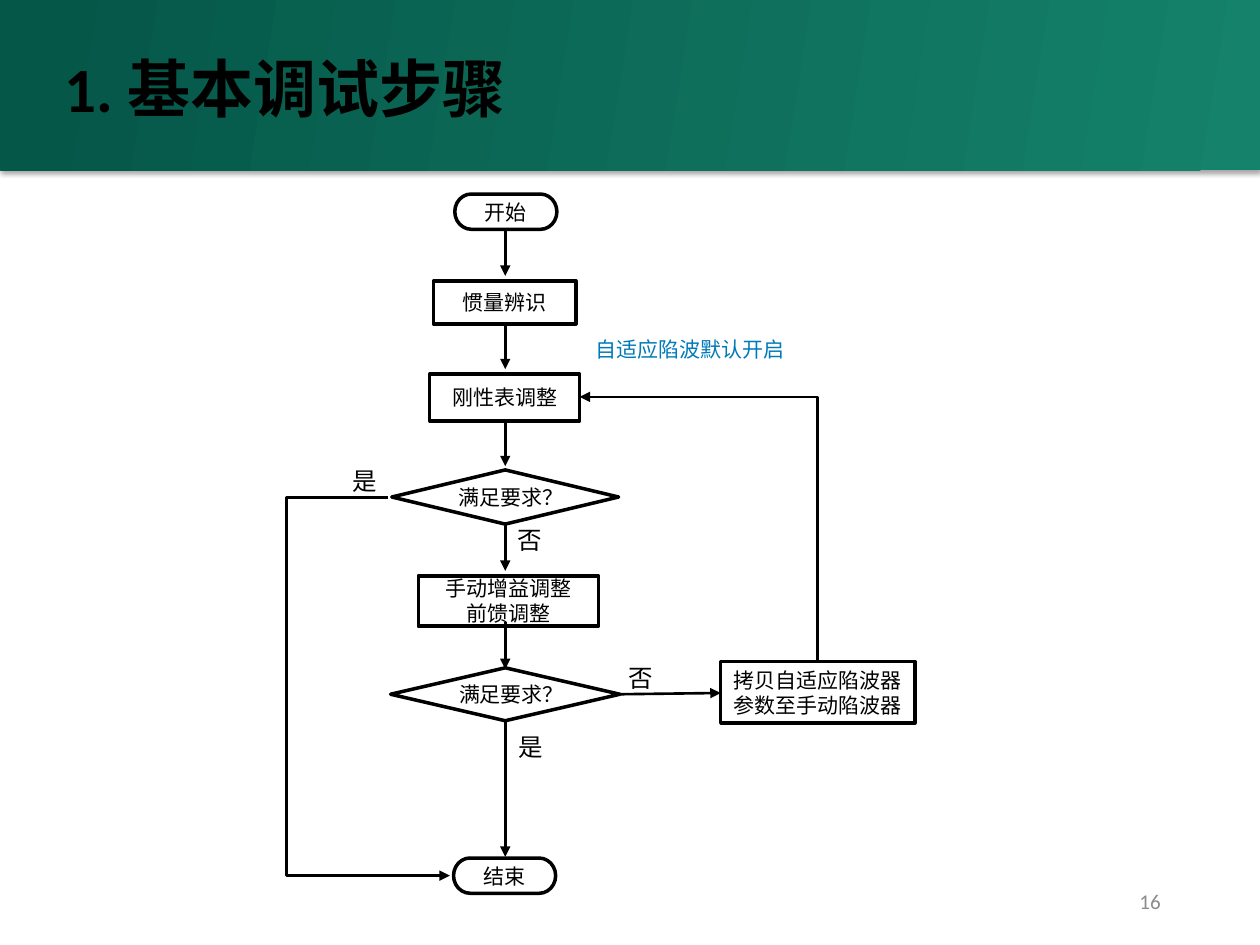
from lxml import etree
from pptx import Presentation
from pptx import util as u
from pptx.dml.color import RGBColor
from pptx.enum import shapes, text
from pptx.oxml import parse_xml
from pptx.oxml.ns import qn

In = u.Inches
C = {"ink": "000000", "note": "007AB8", "number": "8C8C8C",
     "banner_light": "15826B", "banner_dark": "055748"}
CJK = "Noto Sans CJK SC"
MID, TOP = text.MSO_ANCHOR.MIDDLE, text.MSO_ANCHOR.TOP
LEFT, CENTER, RIGHT = text.PP_ALIGN.LEFT, text.PP_ALIGN.CENTER, text.PP_ALIGN.RIGHT


def write(sp, words, size, font="Arial", color="ink", align=LEFT, anchor=TOP, bold=False):
    tf = sp.text_frame
    tf.text = words
    tf.word_wrap = True
    tf.vertical_anchor = anchor
    for p in tf.paragraphs:
        p.alignment = align
        for r in p.runs:
            r.font.size = u.Pt(size)
            r.font.name = font
            r.font.bold = bold
            r.font.color.rgb = RGBColor.from_string(C[color])
            etree.SubElement(r.font._element, qn("a:ea")).set("typeface", CJK)
    return tf


def connect(kind, x1, y1, x2, y2, arrow="tailEnd"):
    cn = s.shapes.add_connector(kind, In(x1), In(y1), In(x2), In(y2))
    cn.line.width = u.Pt(1.5)
    cn.line.color.rgb = RGBColor.from_string(C["ink"])
    etree.SubElement(cn.line._get_or_add_ln(), qn("a:" + arrow)).set("type", "triangle")
    etree.SubElement(cn._element.spPr, qn("a:effectLst"))
    return cn


prs = Presentation()
prs.slide_width, prs.slide_height = In(10), In(7.5)
s = prs.slides.add_slide(prs.slide_layouts[5])

# Banner behind the title
banner = s.shapes.add_shape(shapes.MSO_SHAPE.RECTANGLE, 0, 0, In(10), In(1.35))
banner.line.fill.background()
banner.fill.gradient()
banner.fill.gradient_angle = 171
for stop, place, name in zip(banner.fill.gradient_stops, (0, 0.97),
                             ("banner_light", "banner_dark")):
    stop.position = place
    stop.color.rgb = RGBColor.from_string(C[name])
banner._element.spPr.append(parse_xml(
    '<a:effectLst xmlns:a="http://schemas.openxmlformats.org/drawingml/2006/main">'
    '<a:outerShdw blurRad="39400" dist="22900" dir="5400000" rotWithShape="0">'
    '<a:srgbClr val="000000"><a:alpha val="35000"/></a:srgbClr>'
    '</a:outerShdw></a:effectLst>'))
s.shapes._spTree.insert(2, banner._element)

# Title
title = s.shapes.title
title.left, title.top, title.width, title.height = In(0.41), In(0.34), In(9), In(0.75)
write(title, "1. 基本调试步骤", 36, "Calibri", bold=True)

# Flowchart steps
END = shapes.MSO_SHAPE.FLOWCHART_TERMINATOR
STEP = shapes.MSO_SHAPE.FLOWCHART_PROCESS
TEST = shapes.MSO_SHAPE.FLOWCHART_DECISION
steps = [
    (END, 3.61, 1.54, 0.81, 0.28, "开始"),
    (STEP, 3.44, 2.23, 1.13, 0.34, "惯量辨识"),
    (STEP, 3.41, 2.97, 1.19, 0.37, "刚性表调整"),
    (TEST, 3.11, 3.73, 1.8, 0.43, "满足要求？"),
    (STEP, 3.32, 4.57, 1.43, 0.4, "手动增益调整\n前馈调整"),
    (TEST, 3.1, 5.3, 1.82, 0.42, "满足要求？"),
    (END, 3.6, 6.81, 0.81, 0.28, "结束"),
    (STEP, 5.72, 5.25, 1.54, 0.49, "拷贝自适应陷波器参数至手动陷波器"),
]
for kind, x, y, w, h, words in steps:
    sp = s.shapes.add_shape(kind, In(x), In(y), In(w), In(h))
    sp.shadow.inherit = False
    sp.fill.background()
    sp.line.color.rgb = RGBColor.from_string(C["ink"])
    sp.line.width = u.Pt(2)
    tf = write(sp, words, 12, align=CENTER, anchor=MID)
    tf.margin_left = tf.margin_right = In(0.05)
    tf.margin_top = tf.margin_bottom = 0
    if kind == TEST:
        tf.word_wrap = False
        tf.margin_left = In(0.15)

# Arrows down the main path and out to the side step
for y1, y2 in [(1.82, 2.19), (2.56, 2.93), (3.33, 3.7), (4.17, 4.53), (4.94, 5.31), (5.73, 6.8)]:
    connect(shapes.MSO_CONNECTOR.STRAIGHT, 4.01, y1, 4.01, y2)
connect(shapes.MSO_CONNECTOR.STRAIGHT, 4.92, 5.51, 5.72, 5.5)

# Loop back to the stiffness step: one bend, arrowhead at its start
loop = connect(shapes.MSO_CONNECTOR.ELBOW, 4.6, 3.15, 6.49, 5.25, "headEnd")
loop._element.spPr.find(qn("a:prstGeom")).set("prst", "bentConnector2")

# Shortcut to the end: the bend lies left of both ends
skip = connect(shapes.MSO_CONNECTOR.ELBOW, 3.08, 3.95, 3.57, 6.95)
guides = skip._element.spPr.find(qn("a:prstGeom")).get_or_add_avLst()
gd = etree.SubElement(guides, qn("a:gd"))
gd.set("name", "adj1")
gd.set("fmla", "val -164500")

# Branch labels, note and page number
labels = [
    (2.7, 3.65, 0.4, 0.28, "是", 14, CJK, "ink", LEFT, TOP),
    (4.01, 4.12, 0.4, 0.28, "否", 14, CJK, "ink", LEFT, TOP),
    (4.89, 5.21, 0.4, 0.28, "否", 14, CJK, "ink", LEFT, TOP),
    (4.02, 5.76, 0.4, 0.28, "是", 14, CJK, "ink", LEFT, TOP),
    (4.63, 2.62, 1.85, 0.3, "自适应陷波默认开启", 12, "Arial", "note", LEFT, TOP),
    (7.06, 6.95, 2.25, 0.4, "16", 12, "Calibri", "number", RIGHT, MID),
]
for x, y, w, h, *style in labels:
    write(s.shapes.add_textbox(In(x), In(y), In(w), In(h)), *style)

prs.save("out.pptx")
